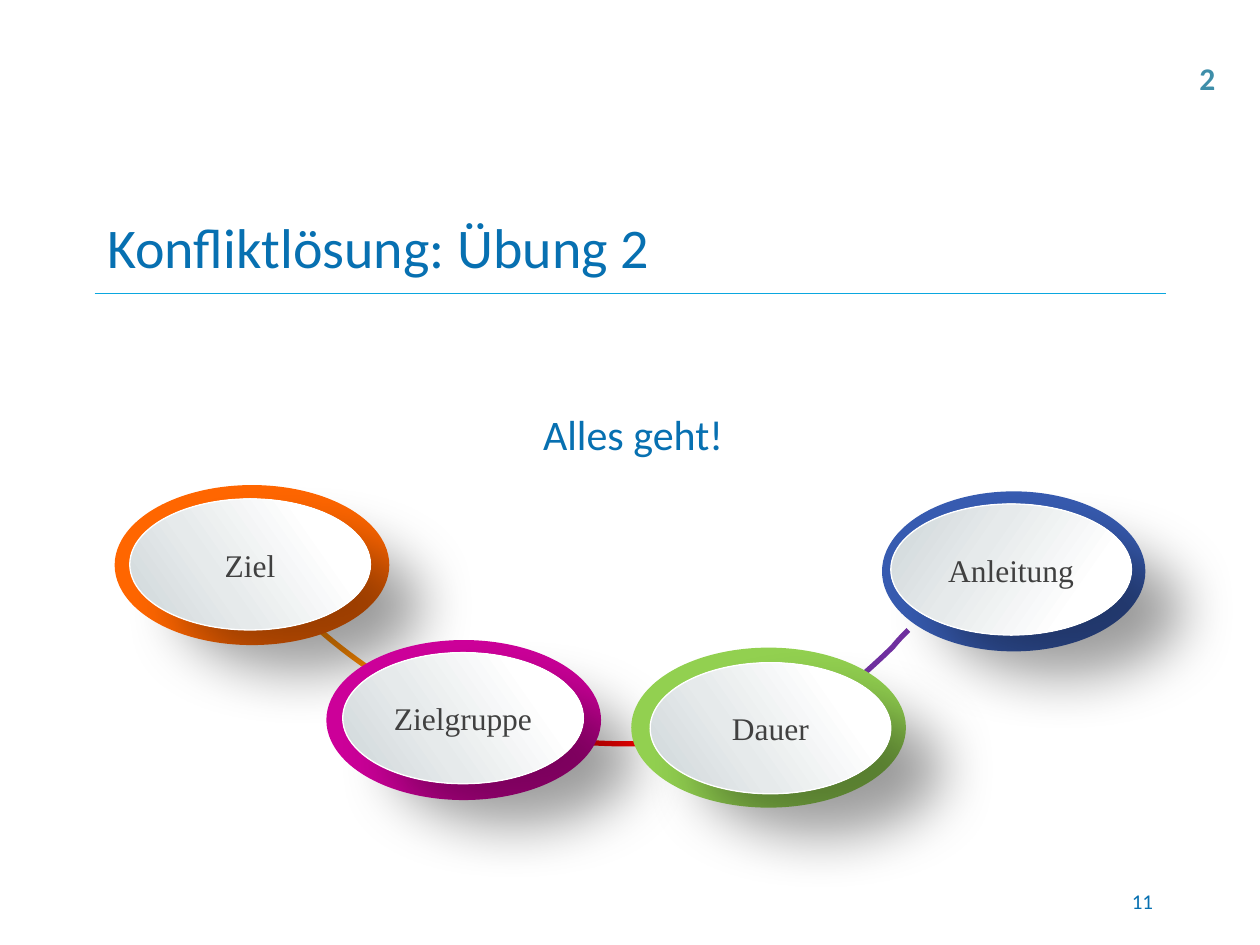
from dataclasses import dataclass

from lxml import etree
from pptx import Presentation, util as u
from pptx.dml.color import RGBColor
from pptx.enum import shapes, text
from pptx.oxml import parse_xml
from pptx.oxml.ns import nsdecls, qn

ALIGN = text.PP_ALIGN
ANCHOR = text.MSO_ANCHOR


@dataclass(frozen=True)
class Theme:
    blue: str = "0770B1"
    rule: str = "0BA7DF"
    badge: str = "3E8EA9"
    label: str = "404040"
    white: str = "FFFFFF"
    gradient: tuple = ((0, "CDD5D8"), (37, "E6EAEB"), (77, "FFFFFF"), (100, "FFFFFF"))
    sans: str = "Calibri"
    serif: str = "Times New Roman"
    title_size: int = 32
    lead_size: int = 24
    label_size: int = 18
    small_size: int = 12


THEME = Theme()


def write(frame, words, *, size, color, font=THEME.sans, bold=False, align=ALIGN.LEFT,
          anchor=ANCHOR.TOP, wrap=True, inset=None, line_spacing=None, after=None):
    """Fill a text frame with one formatted paragraph."""
    frame.word_wrap = wrap
    frame.auto_size = text.MSO_AUTO_SIZE.NONE
    frame.vertical_anchor = anchor
    if inset is not None:
        frame.margin_left = frame.margin_right = u.Inches(inset)
        frame.margin_top = frame.margin_bottom = u.Inches(inset)
    paragraph = frame.paragraphs[0]
    paragraph.alignment = align
    if line_spacing:
        paragraph.line_spacing = line_spacing
    if after:
        paragraph.space_after = u.Pt(after)
    run = paragraph.add_run()
    run.text = words
    run.font.name = font
    run.font.size = u.Pt(size)
    run.font.bold = bold
    run.font.color.rgb = RGBColor.from_string(color)


def bezier(start, first, second, end, steps=12):
    """Points on a cubic curve, without its start."""
    points = []
    for step in range(1, steps + 1):
        t = step / steps
        weights = ((1 - t) ** 3, 3 * t * (1 - t) ** 2, 3 * t * t * (1 - t), t ** 3)
        points.append(tuple(
            u.Inches(sum(w * p[axis] for w, p in zip(weights, (start, first, second, end))))
            for axis in (0, 1)))
    return points


class SlideBuilder:
    def __init__(self, slide, theme):
        self.slide = slide
        self.theme = theme

    def title(self, words, box):
        shape = self.slide.shapes.title
        shape.left, shape.top, shape.width, shape.height = map(u.Inches, box)
        write(shape.text_frame, words, size=self.theme.title_size,
              color=self.theme.blue, anchor=ANCHOR.MIDDLE)

    def text_box(self, words, box, **style):
        shape = self.slide.shapes.add_textbox(*map(u.Inches, box))
        write(shape.text_frame, words, **style)

    def rule(self, left, right, top):
        line = self.slide.shapes.add_connector(
            shapes.MSO_CONNECTOR.STRAIGHT, *map(u.Inches, (left, top, right, top)))
        line.line.color.rgb = RGBColor.from_string(self.theme.rule)
        line.line.width = u.Pt(0.75)
        etree.SubElement(line._element.spPr, qn("a:effectLst"))

    def link(self, color, points):
        """Open curve: a start point, then three points per segment."""
        builder = self.slide.shapes.build_freeform(*map(u.Inches, points[0]), scale=1.0)
        for i in range(0, len(points) - 1, 3):
            builder.add_line_segments(bezier(*points[i:i + 4]), close=False)
        curve = builder.convert_to_shape()
        curve.shadow.inherit = False
        curve.fill.background()
        curve.line.color.rgb = RGBColor.from_string(color)
        curve.line.width = u.Pt(3)

    def ellipse(self, left, top, width, height):
        shape = self.slide.shapes.add_shape(
            shapes.MSO_SHAPE.OVAL, *map(u.Inches, (left, top, width, height)))
        shape.shadow.inherit = False
        return shape

    def node(self, words, color, rim_box, face_corner, angle):
        """Coloured rim with a shaded, labelled face that casts a shadow."""
        rim = self.ellipse(*rim_box)
        rim.fill.solid()
        rim.fill.fore_color.rgb = RGBColor.from_string(color)
        rim.line.fill.background()

        face = self.ellipse(*face_corner, 1.91, 1.04)
        face.fill.gradient()
        face.fill.gradient_angle = angle
        properties = face._element.spPr
        stops = properties.find(qn("a:gradFill")).find(qn("a:gsLst"))
        for stop in list(stops):
            stops.remove(stop)
        for position, shade in self.theme.gradient:
            stops.append(parse_xml(
                f'<a:gs {nsdecls("a")} pos="{position * 1000}">'
                f'<a:srgbClr val="{shade}"/></a:gs>'))
        face.line.color.rgb = RGBColor.from_string(self.theme.white)
        face.line.width = u.Pt(0.75)
        properties.find(qn("a:effectLst")).append(parse_xml(
            f'<a:outerShdw {nsdecls("a")} blurRad="{u.Pt(33)}" dist="{u.Pt(36.7)}" '
            f'dir="{39 * 60000}" algn="ctr" rotWithShape="0">'
            '<a:srgbClr val="000000"><a:alpha val="38000"/></a:srgbClr></a:outerShdw>'))
        write(face.text_frame, words, size=self.theme.label_size, font=self.theme.serif,
              color=self.theme.label, align=ALIGN.CENTER, anchor=ANCHOR.MIDDLE, inset=0)


def main():
    presentation = Presentation()
    presentation.slide_width, presentation.slide_height = u.Inches(10), u.Inches(7.5)
    slide = presentation.slides.add_slide(presentation.slide_layouts[5])
    builder = SlideBuilder(slide, THEME)

    # Heading and page number
    builder.rule(0.75, 9.25, 2.33)
    builder.title("Konfliktlösung: Übung 2", (0.75, 1.58, 8.5, 0.75))
    builder.text_box("11", (7.17, 6.95, 2.08, 0.4), size=THEME.small_size,
                     color=THEME.blue, align=ALIGN.RIGHT, anchor=ANCHOR.MIDDLE)

    # Curves between the nodes
    links = (
        ("7030A0", ((7.21, 5), (7.17, 5.04), (7.13, 5.08), (7.09, 5.13),
                    (6.96, 5.26), (6.82, 5.38), (6.68, 5.5))),
        ("7030A0", ((6.68, 5.49), (6.5, 5.61), (6.31, 5.71), (6.1, 5.79))),
        ("FF0000", ((4.49, 5.88), (4.71, 5.9), (4.93, 5.91), (5.15, 5.9),
                    (5.26, 5.89), (5.37, 5.88), (5.48, 5.86))),
        ("FF8A00", ((2.47, 4.94), (2.68, 5.14), (2.94, 5.32), (3.22, 5.5))),
    )
    for color, points in links:
        builder.link(color, points)

    # Nodes
    nodes = (
        ("Anleitung", "375BB0", (7, 3.9, 2.09, 1.27), (7.07, 4), 325),
        ("Ziel", "FF6600", (0.91, 3.85, 2.18, 1.27), (1.03, 3.96), 35),
        ("Zielgruppe", "CC0099", (2.59, 5.08, 2.18, 1.27), (2.72, 5.18), 35),
        ("Dauer", "92D050", (5.01, 5.14, 2.18, 1.27), (5.16, 5.26), 35),
    )
    for node in nodes:
        builder.node(*node)

    # Lead line and exercise number
    builder.text_box("Alles geht!", (2.59, 3.13, 4.87, 0.54), size=THEME.lead_size,
                     color=THEME.blue, align=ALIGN.CENTER, line_spacing=1.15, after=6)
    builder.text_box("2", (9.42, 0.42, 0.33, 0.4), size=THEME.label_size,
                     color=THEME.badge, bold=True, wrap=False)

    presentation.save("out.pptx")


if __name__ == "__main__":
    main()
